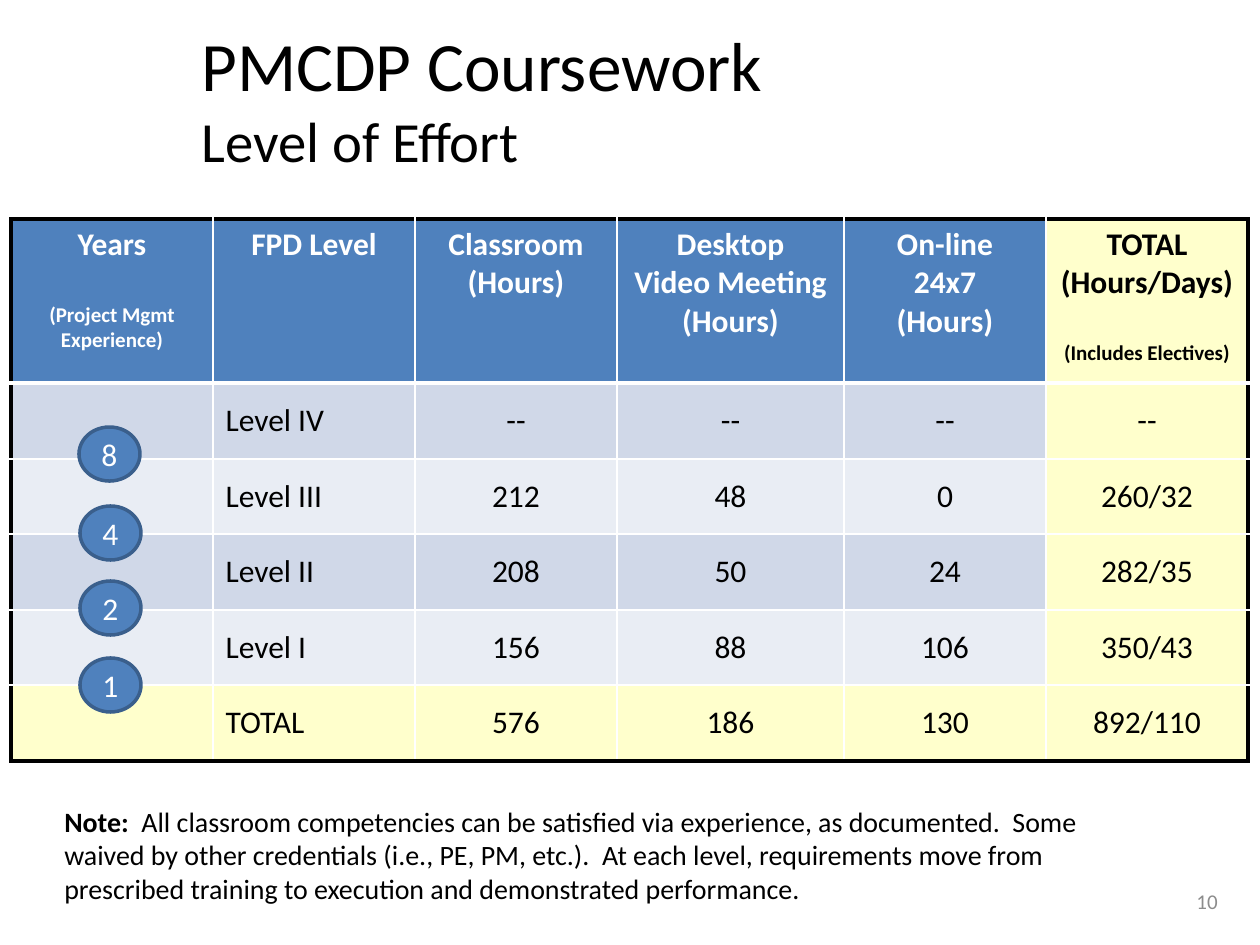
from lxml import etree
from pptx import Presentation
from pptx.dml.color import RGBColor
from pptx.enum.shapes import MSO_SHAPE
from pptx.enum.text import MSO_ANCHOR, PP_ALIGN
from pptx.oxml.ns import qn
from pptx.util import Emu, Pt

LEFT, CENTER, RIGHT = PP_ALIGN.LEFT, PP_ALIGN.CENTER, PP_ALIGN.RIGHT
TOP, MIDDLE = MSO_ANCHOR.TOP, MSO_ANCHOR.MIDDLE
OVAL = MSO_SHAPE.OVAL

PX_PER_INCH = 126
FONT = "Calibri"
BLACK, WHITE, GRAY = "000000", "FFFFFF", "8C8C8C"
BLUE, DARK_BLUE, YELLOW = "4F81BD", "3A5F8C", "FFFFCC"
BANDS = ["D0D8E8", "E9EDF4"]

COLUMN_WIDTHS = [202, 202, 202, 227, 202, 202]
ROW_HEIGHTS = [164, 76, 75, 76, 75, 76]
ROWS = [
    ["Years\n(Project Mgmt Experience)", "FPD Level", "Classroom\n(Hours)",
     "Desktop\nVideo Meeting\n(Hours)", "On-line\n24x7\n(Hours)",
     "TOTAL\n(Hours/Days)\n(Includes Electives)"],
    ["", "Level IV", "--", "--", "--", "--"],
    ["", "Level III", "212", "48", "0", "260/32"],
    ["", "Level II", "208", "50", "24", "282/35"],
    ["", "Level I", "156", "88", "106", "350/43"],
    ["", "TOTAL", "576", "186", "130", "892/110"],
]
SMALL_PRINT = ["(Project Mgmt Experience)", "(Includes Electives)"]
YEAR_BADGES = [("8", 79, 427), ("4", 80, 506), ("2", 80, 581), ("1", 80, 658)]
NOTE = ("All classroom competencies can be satisfied via experience, as documented.  "
        "Some waived by other credentials (i.e., PE, PM, etc.).  At each level, "
        "requirements move from prescribed training to execution and demonstrated "
        "performance.")


def px(length):
    return Emu(round(length * 914400 / PX_PER_INCH))


def rgb(color):
    return RGBColor.from_string(color)


def style(span, size, color=BLACK, bold=False):
    span.font.name = FONT
    span.font.size = Pt(size)
    span.font.bold = bold
    span.font.color.rgb = rgb(color)


def add_text(page, place, spans, align=LEFT, anchor=TOP):
    """Add a one-paragraph text box; spans are (text, size, color, bold)."""
    box = page.shapes.add_textbox(*map(px, place))
    frame = box.text_frame
    frame.word_wrap = True
    frame.vertical_anchor = anchor
    para = frame.paragraphs[0]
    para.alignment = align
    for text, *look in spans:
        span = para.add_run()
        span.text = text
        style(span, *look)


def add_title(page):
    box = page.shapes.add_textbox(*map(px, (189, 38, 1008, 120)))
    frame = box.text_frame
    frame.word_wrap = True
    frame.vertical_anchor = MIDDLE
    para = frame.paragraphs[0]
    para.text = "PMCDP Coursework\vLevel of Effort"
    for span, size in zip(para.runs, (39.6, 32.4)):
        style(span, size)


def set_borders(cell, borders):
    """Draw the borders, given as {tag: (color, points)} in schema order."""
    properties = cell._tc.get_or_add_tcPr()
    for index, (tag, (color, width)) in enumerate(borders.items()):
        line = etree.Element(qn(f"a:{tag}"), w=str(Pt(width)))
        fill = etree.SubElement(line, qn("a:solidFill"))
        etree.SubElement(fill, qn("a:srgbClr"), val=color)
        properties.insert(index, line)


def cell_fill(row, column):
    if column == len(COLUMN_WIDTHS) - 1 or row == len(ROWS) - 1:
        return YELLOW
    return BLUE if row == 0 else BANDS[(row - 1) % 2]


def cell_borders(row, column):
    outer, inner, heavy = (BLACK, 2.25), (WHITE, 1), (WHITE, 3)
    return {
        "lnL": outer if column == 0 else inner,
        "lnR": outer if column == len(COLUMN_WIDTHS) - 1 else inner,
        "lnT": outer if row == 0 else heavy if row == 1 else inner,
        "lnB": heavy if row == 0 else outer if row == len(ROWS) - 1 else inner,
    }


def fill_cell(cell, row, column, text):
    header = row == 0
    fill = cell_fill(row, column)
    cell.fill.solid()
    cell.fill.fore_color.rgb = rgb(fill)
    set_borders(cell, cell_borders(row, column))
    cell.vertical_anchor = TOP if header else MIDDLE
    cell.text_frame.text = text
    for para in cell.text_frame.paragraphs:
        small = para.text in SMALL_PRINT
        para.alignment = LEFT if column == 1 and not header else CENTER
        if small:
            para.space_before = Pt(22)
        for span in para.runs:
            style(span, 12 if small else 18, WHITE if fill == BLUE else BLACK, header)


def add_hours_table(page):
    place = (11, 219, sum(COLUMN_WIDTHS), sum(ROW_HEIGHTS))
    frame = page.shapes.add_table(len(ROWS), len(COLUMN_WIDTHS), *map(px, place))
    table = frame.table
    for column, width in zip(table.columns, COLUMN_WIDTHS):
        column.width = px(width)
    for row, height in zip(table.rows, ROW_HEIGHTS):
        row.height = px(height)
    for row, texts in enumerate(ROWS):
        for column, text in enumerate(texts):
            fill_cell(table.cell(row, column), row, column, text)


def add_badge(page, years, left, top):
    badge = page.shapes.add_shape(OVAL, px(left), px(top), px(61), px(54))
    badge.shadow.inherit = False
    badge.fill.solid()
    badge.fill.fore_color.rgb = rgb(BLUE)
    badge.line.color.rgb = rgb(DARK_BLUE)
    badge.line.width = Pt(2)
    frame = badge.text_frame
    frame.text = years
    frame.vertical_anchor = MIDDLE
    frame.paragraphs[0].alignment = CENTER
    style(frame.paragraphs[0].runs[0], 18, WHITE)


def main():
    deck = Presentation()
    deck.slide_width, deck.slide_height = px(1260), px(945)
    page = deck.slides.add_slide(deck.slide_layouts[6])
    add_title(page)
    add_hours_table(page)
    add_text(page, (936, 876, 294, 50), [("10", 12, GRAY, False)], RIGHT, MIDDLE)
    add_text(page, (52, 798, 1096, 115),
             [("Note:  ", 16, BLACK, True), (NOTE, 16, BLACK, False)])
    for years, left, top in YEAR_BADGES:
        add_badge(page, years, left, top)
    deck.save("out.pptx")


if __name__ == "__main__":
    main()
